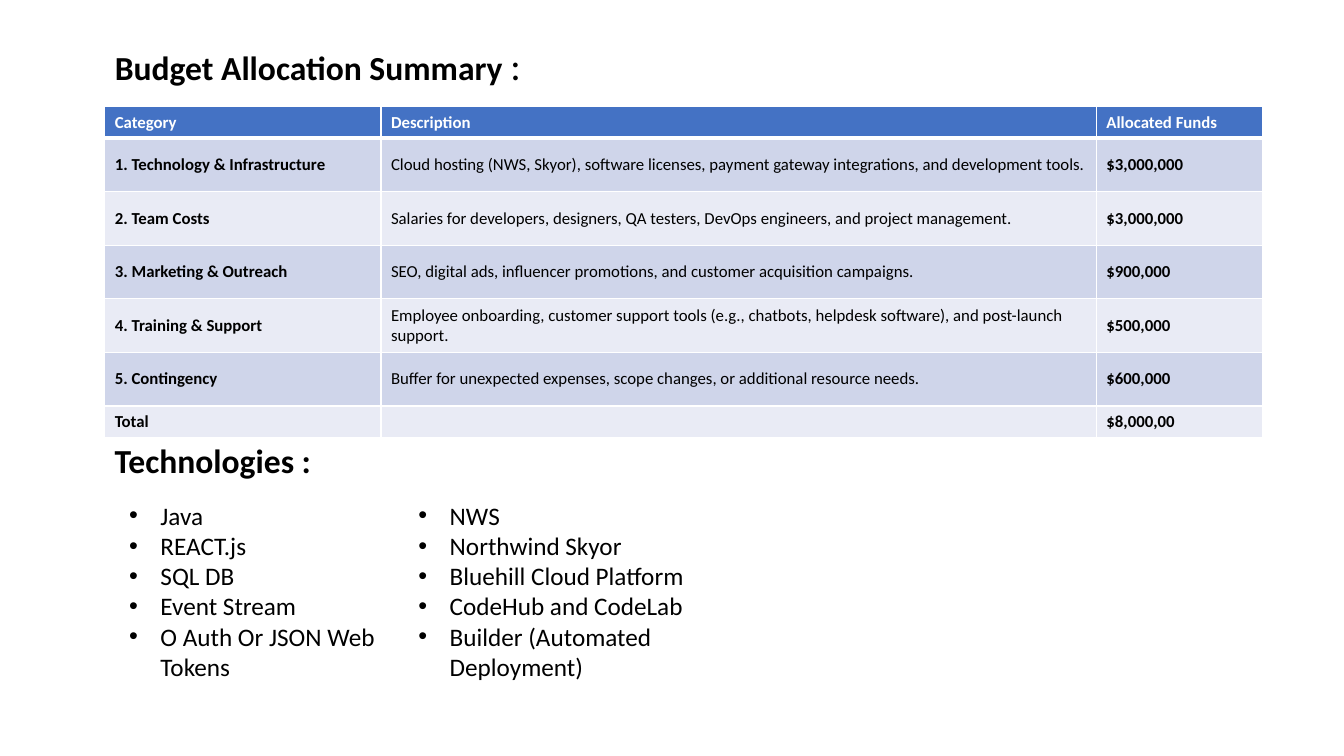
import pptx
import pptx.dml.color
import pptx.enum.text
import pptx.oxml.ns
import pptx.util
from lxml import etree
from pptx.util import Cm, Pt

RGBColor = pptx.dml.color.RGBColor
BLACK = RGBColor(0x00, 0x00, 0x00)
WHITE = RGBColor(0xFF, 0xFF, 0xFF)
HEADER_BLUE = RGBColor(0x44, 0x72, 0xC4)
BAND_DARK = RGBColor(0xCF, 0xD5, 0xEA)
BAND_LIGHT = RGBColor(0xE9, 0xEB, 0xF5)

FONT = "Calibri"
LEFT = Cm(2.64)
COLUMN_WIDTHS = (6.96, 18.03, 4.19)
SHORT_ROW, TALL_ROW = 0.79, 1.35

BUDGET = (
    ("Category", "Description", "Allocated Funds"),
    ("1. Technology & Infrastructure",
     "Cloud hosting (NWS, Skyor), software licenses, payment gateway "
     "integrations, and development tools.", "$3,000,000"),
    ("2. Team Costs",
     "Salaries for developers, designers, QA testers, DevOps engineers, "
     "and project management.", "$3,000,000"),
    ("3. Marketing & Outreach",
     "SEO, digital ads, influencer promotions, and customer acquisition "
     "campaigns.", "$900,000"),
    ("4. Training & Support",
     "Employee onboarding, customer support tools (e.g., chatbots, helpdesk "
     "software), and post-launch support.", "$500,000"),
    ("5. Contingency",
     "Buffer for unexpected expenses, scope changes, or additional resource "
     "needs.", "$600,000"),
    ("Total", "", "$8,000,00"),
)
SOFTWARE = ("Java", "REACT.js", "SQL DB", "Event Stream",
            "O Auth Or JSON Web Tokens")
PLATFORMS = ("NWS", "Northwind Skyor", "Bluehill Cloud Platform",
             "CodeHub and CodeLab", "Builder (Automated Deployment)")


def add_span(para, text, size, color=BLACK, bold=False):
    span = para.add_run()
    span.text = text
    span.font.name = FONT
    span.font.size = Pt(size)
    span.font.bold = bold
    span.font.color.rgb = color


def place(box, left, top, width, height):
    box.left, box.top, box.width, box.height = left, top, width, height
    frame = box.text_frame
    frame.word_wrap = True
    frame.auto_size = pptx.enum.text.MSO_AUTO_SIZE.NONE
    frame.vertical_anchor = pptx.enum.text.MSO_ANCHOR.TOP
    return frame


def write_title(page):
    frame = place(page.shapes.title, LEFT, Cm(0.91), Cm(17.17), Cm(1.45))
    para = frame.paragraphs[0]
    para.alignment = pptx.enum.text.PP_ALIGN.LEFT
    add_span(para, "Budget Allocation Summary ", 24, bold=True)
    add_span(para, ":", 28)


def add_heading(page, text, top):
    box = page.shapes.add_textbox(LEFT, top, Cm(5.51), Cm(1.27))
    frame = place(box, LEFT, top, Cm(5.51), Cm(1.27))
    frame.word_wrap = False
    add_span(frame.paragraphs[0], text, 24, bold=True)


def write_list(box, items, left, width, height):
    frame = place(box, left, Cm(12.47), width, height)
    for index, item in enumerate(items):
        para = frame.add_paragraph() if index else frame.paragraphs[0]
        para.space_before = Pt(0)
        add_span(para, item, 18)
        # Hanging bullet
        props = para._p.get_or_add_pPr()
        props.set("marL", str(Cm(0.79)))
        props.set("indent", str(-Cm(0.79)))
        font = etree.SubElement(props, pptx.oxml.ns.qn("a:buFont"))
        font.set("typeface", "Arial")
        bullet = etree.SubElement(props, pptx.oxml.ns.qn("a:buChar"))
        bullet.set("char", "•")


def set_borders(cell, top, bottom):
    props = cell._tc.get_or_add_tcPr()
    sides = (("L", 1), ("R", 1), ("T", top), ("B", bottom))
    for position, (side, points) in enumerate(sides):
        line = etree.Element(pptx.oxml.ns.qn("a:ln" + side), w=str(Pt(points)))
        fill = etree.SubElement(line, pptx.oxml.ns.qn("a:solidFill"))
        etree.SubElement(fill, pptx.oxml.ns.qn("a:srgbClr"), val=str(WHITE))
        props.insert(position, line)


def write_cell(cell, text, fill, color, bold):
    cell.fill.solid()
    cell.fill.fore_color.rgb = fill
    cell.vertical_anchor = pptx.enum.text.MSO_ANCHOR.MIDDLE
    para = cell.text_frame.paragraphs[0]
    if text:
        add_span(para, text, 12, color, bold)
    else:
        # Keeps the row of an empty cell low
        etree.SubElement(para._p, pptx.oxml.ns.qn("a:endParaRPr"), sz="1200")


def add_budget_table(page):
    last = len(BUDGET) - 1
    heights = [SHORT_ROW if row in (0, last) else TALL_ROW
               for row in range(len(BUDGET))]
    table = page.shapes.add_table(
        len(BUDGET), len(COLUMN_WIDTHS), LEFT, Cm(2.69),
        Cm(sum(COLUMN_WIDTHS)), Cm(sum(heights))).table
    for column, width in zip(table.columns, COLUMN_WIDTHS):
        column.width = Cm(width)
    for row, texts in enumerate(BUDGET):
        table.rows[row].height = Cm(heights[row])
        header = row == 0
        band = BAND_DARK if row % 2 else BAND_LIGHT
        for column, text in enumerate(texts):
            cell = table.cell(row, column)
            write_cell(cell, text, HEADER_BLUE if header else band,
                       WHITE if header else BLACK, header or column != 1)
            set_borders(cell, 3 if row == 1 else 1, 3 if header else 1)


def main():
    deck = pptx.Presentation()
    deck.slide_width, deck.slide_height = Cm(33.87), Cm(19.05)
    page = deck.slides.add_slide(deck.slide_layouts.get_by_name("Two Content"))

    # Budget
    write_title(page)
    add_budget_table(page)

    # Technologies
    add_heading(page, "Technologies :", Cm(10.95))
    write_list(page.placeholders[1], SOFTWARE, Cm(3), Cm(6.86), Cm(6.4))
    write_list(page.placeholders[2], PLATFORMS, Cm(10.29), Cm(9.07), Cm(5.64))

    deck.save("out.pptx")


if __name__ == "__main__":
    main()
